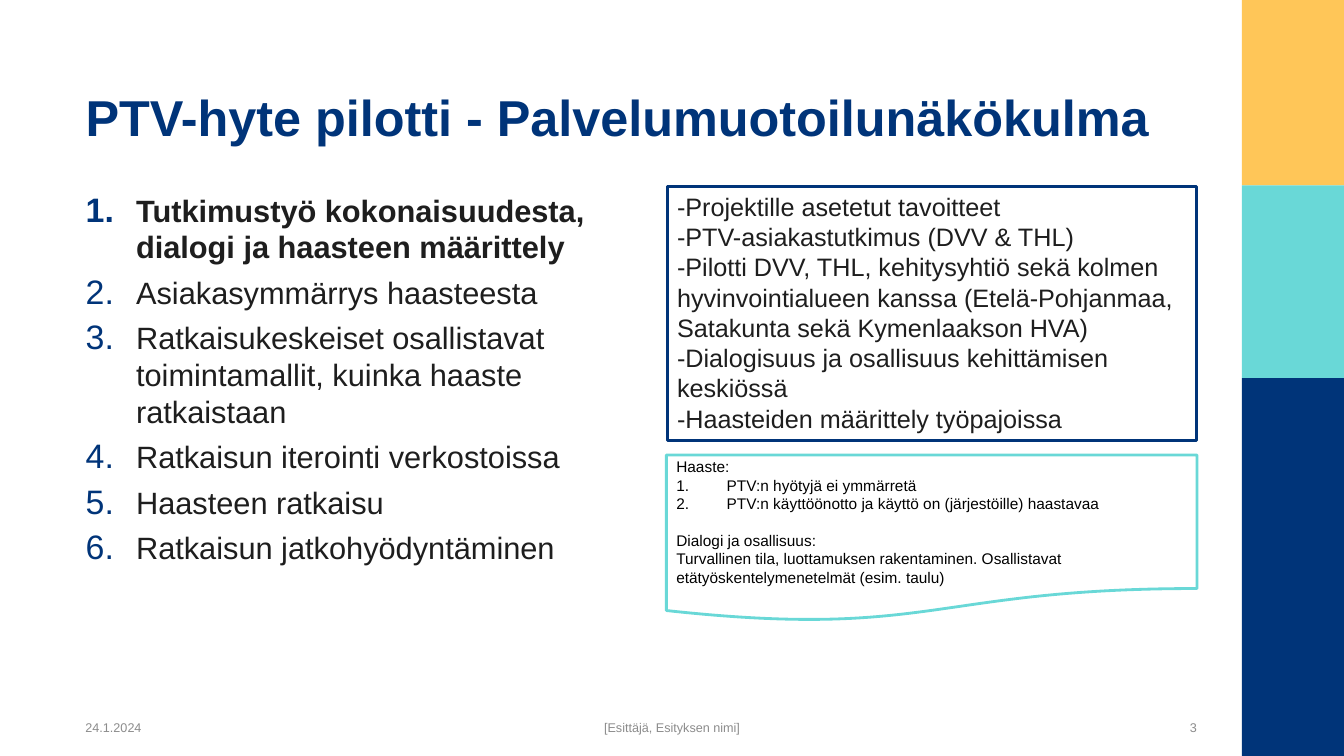
from dataclasses import dataclass

from lxml.etree import SubElement
from pptx import Presentation
from pptx.dml.color import RGBColor
from pptx.enum.shapes import MSO_SHAPE as SHAPE
from pptx.enum.text import MSO_ANCHOR as ANCHOR, MSO_AUTO_SIZE as FIT, PP_ALIGN as ALIGN
from pptx.oxml.ns import qn
from pptx.util import Pt


@dataclass(frozen=True)
class Theme:
    font: str = "Arial"
    navy: str = "003479"
    yellow: str = "FFC658"
    teal: str = "69D8D7"
    white: str = "FFFFFF"
    ink: str = "1E1E1E"
    black: str = "000000"
    grey: str = "8C8C8C"
    title: int = 36
    body: int = 22
    goals: int = 18
    notes: int = 11
    footer: int = 9


def rgb(value):
    return RGBColor.from_string(value)


def number(p, indent, color=None, percent=None):
    """Make a paragraph an automatically numbered list item."""
    pPr = p._p.get_or_add_pPr()
    pPr.set("marL", str(Pt(indent)))
    pPr.set("indent", str(-Pt(indent)))
    if color:
        SubElement(SubElement(pPr, qn("a:buClr")), qn("a:srgbClr"), val=color)
    if percent:
        SubElement(pPr, qn("a:buSzPct"), val=str(percent * 1000))
    SubElement(pPr, qn("a:buFont"), typeface="+mj-lt")
    SubElement(pPr, qn("a:buAutoNum"), type="arabicPeriod")


def write(tf, text, *, size, color, font=Theme.font, bold=False, align=ALIGN.LEFT,
          before=0, after=0, spacing=1.0, numbering=None):
    """Add one paragraph, using the empty first one when there is one."""
    first = tf.paragraphs[0]
    p = tf.add_paragraph() if first.runs else first
    if numbering:
        number(p, **numbering)
    p.alignment = align
    p.space_before = Pt(before)
    p.space_after = Pt(after)
    p.line_spacing = spacing
    r = p.add_run()
    r.text = text
    r.font.name = font
    r.font.size = Pt(size)
    r.font.bold = bold
    r.font.color.rgb = rgb(color)


class Deck:
    def __init__(self, prs, theme):
        self.theme = theme
        self.s = prs.slides.add_slide(prs.slide_layouts[1])

    def frame(self, sp, anchor, fit=FIT.NONE):
        tf = sp.text_frame
        tf.word_wrap = True
        tf.auto_size = fit
        tf.vertical_anchor = anchor
        return tf

    def placeholder(self, idx, left, top, width, height, anchor=ANCHOR.TOP):
        sp = self.s.placeholders[idx]
        sp.left, sp.top, sp.width, sp.height = map(Pt, (left, top, width, height))
        return self.frame(sp, anchor)

    def title(self, text, *box):
        tf = self.placeholder(0, *box, anchor=ANCHOR.BOTTOM)
        write(tf, text, size=self.theme.title, color=self.theme.navy, bold=True)

    def steps(self, items, *box):
        tf = self.placeholder(1, *box)
        numbering = dict(indent=36, color=self.theme.navy, percent=110)
        for i, text in enumerate(items):
            write(tf, text, size=self.theme.body, color=self.theme.ink, bold=i == 0,
                  before=6 if i else 0, numbering=numbering)

    def shape(self, kind, left, top, width, height, fill, line=None):
        sp = self.s.shapes.add_shape(kind, *map(Pt, (left, top, width, height)))
        sp.shadow.inherit = False
        sp.fill.solid()
        sp.fill.fore_color.rgb = rgb(fill)
        if line:
            sp.line.color.rgb = rgb(line)
            sp.line.width = Pt(2)
        else:
            sp.line.fill.background()
        return sp

    def side_band(self, left, width, parts):
        top = 0
        for height, color in parts:
            self.shape(SHAPE.RECTANGLE, left, top, width, height, color)
            top += height

    def footer(self, text, left, width, align):
        sp = self.s.shapes.add_textbox(Pt(left), Pt(512), Pt(width), Pt(17))
        write(self.frame(sp, ANCHOR.MIDDLE), text, size=self.theme.footer,
              color=self.theme.grey, align=align, after=6, spacing=0.9)

    def goals(self, items, *box):
        sp = self.shape(SHAPE.RECTANGLE, *box, self.theme.white, self.theme.navy)
        tf = self.frame(sp, ANCHOR.TOP, FIT.SHAPE_TO_FIT_TEXT)
        for text in items:
            write(tf, "-" + text, size=self.theme.goals, color=self.theme.ink)

    def notes(self, items, *box):
        """Draw the document shape; items pair a text with its paragraph format."""
        sp = self.shape(SHAPE.FLOWCHART_DOCUMENT, *box, self.theme.white, self.theme.teal)
        tf = self.frame(sp, ANCHOR.MIDDLE)
        for text, style in items:
            write(tf, text, size=self.theme.notes, color=self.theme.black, **style)


def main():
    prs = Presentation()
    prs.slide_width, prs.slide_height = Pt(960), Pt(540)
    theme = Theme()
    deck = Deck(prs, theme)

    deck.side_band(887, 73, [(132.5, theme.yellow), (137.5, theme.teal), (270, theme.navy)])
    deck.title("PTV-hyte pilotti - Palvelumuotoilunäkökulma", 54, 11.5, 808, 96.5)
    deck.steps([
        "Tutkimustyö kokonaisuudesta, dialogi ja haasteen määrittely",
        "Asiakasymmärrys haasteesta",
        "Ratkaisukeskeiset osallistavat toimintamallit, kuinka haaste ratkaistaan",
        "Ratkaisun iterointi verkostoissa",
        "Haasteen ratkaisu",
        "Ratkaisun jatkohyödyntäminen",
    ], 54, 133, 397, 363)

    deck.goals([
        "Projektille asetetut tavoitteet",
        "PTV-asiakastutkimus (DVV & THL)",
        "Pilotti DVV, THL, kehitysyhtiö sekä kolmen hyvinvointialueen kanssa "
        "(Etelä-Pohjanmaa, Satakunta sekä Kymenlaakson HVA)",
        "Dialogisuus ja osallisuus kehittämisen keskiössä",
        "Haasteiden määrittely työpajoissa",
    ], 476.5, 133, 378, 181.5)

    numbered = dict(numbering=dict(indent=36))
    deck.notes([
        ("Haaste:", {}),
        ("PTV:n hyötyjä ei ymmärretä", numbered),
        ("PTV:n käyttöönotto ja käyttö on (järjestöille) haastavaa", numbered),
        ("Dialogi ja osallisuus:", dict(before=13)),
        ("Turvallinen tila, luottamuksen rakentaminen. Osallistavat "
         "etätyöskentelymenetelmät (esim. taulu)", {}),
    ], 476, 325, 379, 119)

    deck.footer("24.1.2024", 54, 119, ALIGN.LEFT)
    deck.footer("[Esittäjä, Esityksen nimi]", 251, 458, ALIGN.CENTER)
    deck.footer("3", 796, 66, ALIGN.RIGHT)
    prs.save("out.pptx")


if __name__ == "__main__":
    main()
